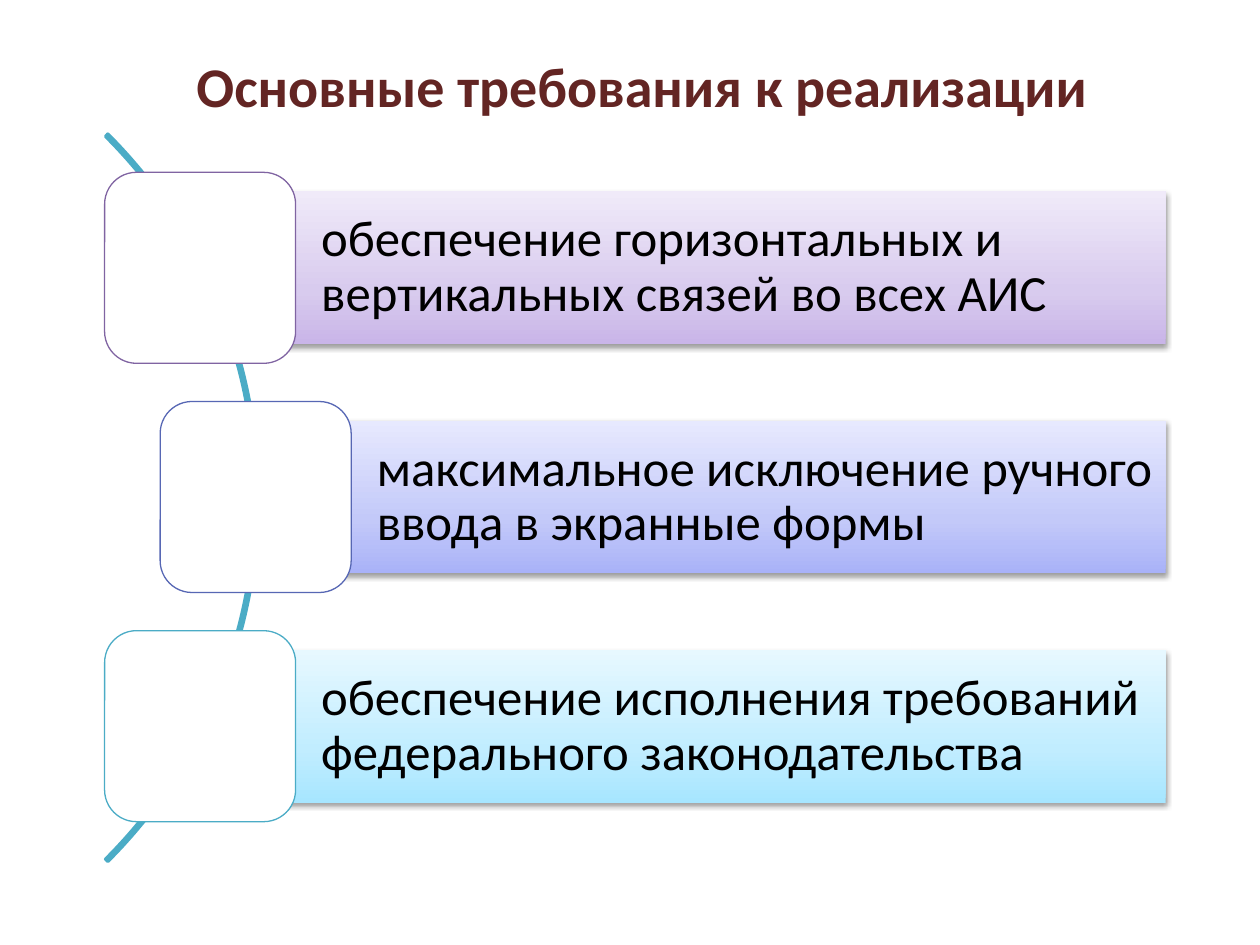
"""Build a slide of three requirements arranged along an arc."""
from copy import deepcopy

from lxml.etree import SubElement
from pptx import Presentation
from pptx.dml.color import RGBColor
from pptx.enum.shapes import MSO_SHAPE
from pptx.enum.text import MSO_ANCHOR, MSO_AUTO_SIZE, PP_ALIGN
from pptx.oxml.ns import qn
from pptx.util import Cm, Pt

WHITE = RGBColor(0xFF, 0xFF, 0xFF)
BLACK = RGBColor(0x00, 0x00, 0x00)
MAROON = RGBColor(0x63, 0x25, 0x23)
PURPLE = RGBColor(0x80, 0x64, 0xA2)
BLUE = RGBColor(0x57, 0x67, 0xB4)
TEAL = RGBColor(0x4B, 0xAC, 0xC6)
PURPLE_SHADES = (RGBColor(0xC9, 0xB5, 0xE8), RGBColor(0xD8, 0xCB, 0xEE), RGBColor(0xF0, 0xEA, 0xF9))
BLUE_SHADES = (RGBColor(0xA9, 0xB2, 0xF8), RGBColor(0xC3, 0xC9, 0xF9), RGBColor(0xE7, 0xE9, 0xFE))
TEAL_SHADES = (RGBColor(0xA7, 0xE6, 0xFF), RGBColor(0xC1, 0xED, 0xFF), RGBColor(0xE7, 0xF8, 0xFF))

REQUIREMENTS = (
    ("обеспечение горизонтальных и вертикальных связей во всех АИС", 0, PURPLE, PURPLE_SHADES),
    ("максимальное исключение ручного ввода в экранные формы", 1.12, BLUE, BLUE_SHADES),
    ("обеспечение исполнения требований федерального законодательства", 0, TEAL, TEAL_SHADES),
)
TILE_LEFT, TILE_SIZE = 2.11, 3.85
BAR_RIGHT, BAR_HEIGHT = 23.5, 3.08
FIRST_CENTER, ROW_PITCH = 5.4, 4.62


def write_text(shape, text, size, color, bold=False, anchor=MSO_ANCHOR.MIDDLE,
               line_spacing=1.0, margins=(0.25, 0.13, 0.25, 0.13)):
    """Fill a shape with one left-aligned, formatted paragraph."""
    frame = shape.text_frame
    frame.word_wrap = True
    frame.auto_size = MSO_AUTO_SIZE.NONE
    frame.vertical_anchor = anchor
    frame.margin_left, frame.margin_top, frame.margin_right, frame.margin_bottom = map(Cm, margins)
    paragraph = frame.paragraphs[0]
    paragraph.alignment = PP_ALIGN.LEFT
    paragraph.line_spacing = line_spacing
    run = paragraph.add_run()
    run.text = text
    run.font.name = "Calibri"
    run.font.size = Pt(size)
    run.font.bold = bold
    run.font.color.rgb = color


class SlideBuilder:
    """Hold the current slide and the look of its elements."""

    def __init__(self, slide):
        """Start on the given slide."""
        self.slide = slide

    def add_title(self, text):
        """Place the heading in the title placeholder."""
        title = self.slide.shapes.title
        title.left, title.top, title.width, title.height = Cm(3.71), Cm(0.91), Cm(18.97), Cm(1.63)
        write_text(title, text, size=32, color=MAROON, bold=True, anchor=MSO_ANCHOR.TOP)

    def add_outline(self, kind, left, top, size, color, width):
        """Add a square-sized outlined shape without fill or shadow."""
        shape = self.slide.shapes.add_shape(kind, Cm(left), Cm(top), Cm(size), Cm(size))
        shape.shadow.inherit = False
        shape.fill.background()
        shape.line.color.rgb = color
        shape.line.width = Pt(width)
        return shape

    def add_arc(self):
        """Add the thin arc behind the rows."""
        arc = self.add_outline(MSO_SHAPE.BLOCK_ARC, -15.52, -0.33, 20.73, TEAL, 2)
        for index, value in enumerate((189, 27, 0.003)):
            arc.adjustments[index] = value

    def add_tile(self, left, center, color):
        """Add a white rounded tile centred on its row."""
        tile = self.add_outline(MSO_SHAPE.ROUNDED_RECTANGLE, left, center - TILE_SIZE / 2,
                                TILE_SIZE, color, 0.75)
        tile.fill.solid()
        tile.fill.fore_color.rgb = WHITE

    def add_bar(self, left, center, text, shades):
        """Add a shaded bar that carries a requirement."""
        bar = self.slide.shapes.add_shape(
            MSO_SHAPE.RECTANGLE, Cm(left), Cm(center - BAR_HEIGHT / 2),
            Cm(BAR_RIGHT - left), Cm(BAR_HEIGHT))
        bar.line.fill.background()
        self.shade(bar, shades)
        self.cast_shadow(bar)
        write_text(bar, text, size=29, color=BLACK, line_spacing=0.9,
                   margins=(2.44, 0.2, 0.2, 0.2))

    def shade(self, shape, shades):
        """Fill a shape with three colours from bottom to top."""
        shape.fill.gradient()
        shape.fill.gradient_angle = 90
        stop_list = shape._element.spPr.find(qn("a:gradFill")).find(qn("a:gsLst"))
        stop_list.insert(1, deepcopy(stop_list[0]))
        for stop, position, color in zip(shape.fill.gradient_stops, (0, 0.35, 1), shades):
            stop.position = position
            stop.color.rgb = color

    def cast_shadow(self, shape):
        """Give a shape a soft shadow below it."""
        shape.shadow.inherit = False
        effects = shape._element.spPr.find(qn("a:effectLst"))
        shadow = SubElement(effects, qn("a:outerShdw"), blurRad=str(Pt(3.1)),
                            dist=str(Pt(1.6)), dir="5400000", rotWithShape="0")
        color = SubElement(shadow, qn("a:srgbClr"), val=str(BLACK))
        SubElement(color, qn("a:alpha"), val="38000")


def main():
    """Create and save the presentation."""
    presentation = Presentation()
    presentation.slide_width, presentation.slide_height = Cm(25.4), Cm(19.05)
    builder = SlideBuilder(presentation.slides.add_slide(presentation.slide_layouts[5]))
    builder.add_title("Основные требования к реализации")
    builder.add_arc()
    for row, (text, indent, color, shades) in enumerate(REQUIREMENTS):
        left = TILE_LEFT + indent
        center = FIRST_CENTER + row * ROW_PITCH
        builder.add_bar(left + TILE_SIZE / 2, center, text, shades)
        builder.add_tile(left, center, color)
    presentation.save("out.pptx")


if __name__ == "__main__":
    main()
